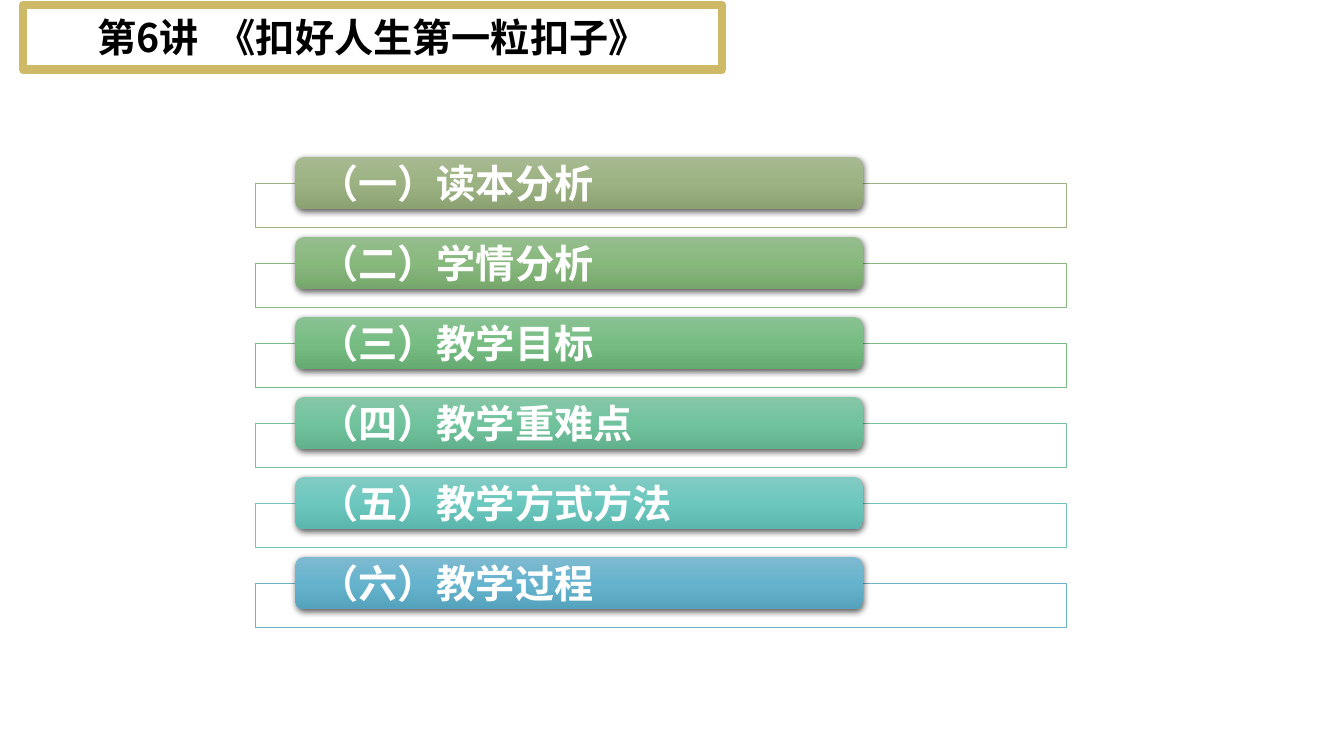
from copy import deepcopy
from dataclasses import dataclass

from lxml import etree
from pptx import Presentation
from pptx.dml.color import RGBColor
from pptx.enum import shapes, text
from pptx.oxml import ns, parse_xml
from pptx.util import Pt

FONT = "Noto Sans CJK SC"
WHITE = RGBColor(0xFF, 0xFF, 0xFF)
BLACK = RGBColor(0, 0, 0)
GOLD = RGBColor(0xCE, 0xB9, 0x66)

FIRST, PITCH = 112.2, 57.14
FRAME_DROP = 18.7


@dataclass
class Topic:
    label: str
    edge: RGBColor
    fade: tuple[RGBColor, RGBColor, RGBColor]


def make_topic(label: str, edge: str, *fade: str) -> Topic:
    top, mid, low = map(RGBColor.from_string, fade)
    return Topic(label, RGBColor.from_string(edge), (top, mid, low))


TOPICS = [
    make_topic("（一）读本分析", "9CB084", "A7B992", "9CB282", "8BA171"),
    make_topic("（二）学情分析", "89B57F", "96BD8E", "87B87C", "76A66B"),
    make_topic("（三）教学目标", "7ABA85", "8AC293", "77BD83", "66AC72"),
    make_topic("（四）教学重难点", "75BF9D", "86C6A7", "71C39D", "60B18C"),
    make_topic("（五）教学方式方法", "70C4BB", "82CBC3", "6CC8BF", "5BB7AD"),
    make_topic("（六）教学过程", "6BB1C9", "7EBAD0", "66B3CE", "55A2BC"),
]


def write(shape, words: str, *, color: RGBColor, align, inset: float,
          size: float = 28) -> None:
    frame = shape.text_frame
    frame.word_wrap = True
    frame.auto_size = text.MSO_AUTO_SIZE.NONE
    frame.vertical_anchor = text.MSO_ANCHOR.MIDDLE
    frame.margin_left = frame.margin_right = Pt(inset)
    frame.margin_top = frame.margin_bottom = 0
    para = frame.paragraphs[0]
    para.alignment = align
    run = para.add_run()
    run.text = words
    font = run.font
    font.size, font.bold, font.name = Pt(size), True, FONT
    font.color.rgb = color
    asian = etree.SubElement(run._r.get_or_add_rPr(), ns.qn("a:ea"))
    asian.set("typeface", FONT)


def set_fade(shape, colors: tuple[RGBColor, ...]) -> None:
    """Fill from top to bottom with three evenly spaced colours."""
    fill = shape.fill
    fill.gradient()
    fill.gradient_angle = 270
    stops = shape.element.spPr.find(".//" + ns.qn("a:gsLst"))
    stops.append(deepcopy(stops[0]))
    for stop, color, place in zip(fill.gradient_stops, colors, (0, 0.5, 1)):
        stop.position = place
        stop.color.rgb = color


def add_shadow(shape) -> None:
    shape.shadow.inherit = False
    effects = shape.element.spPr.find(ns.qn("a:effectLst"))
    effects.append(parse_xml(
        f'<a:outerShdw {ns.nsdecls("a")} blurRad="{Pt(4.5)}" '
        f'dist="{Pt(1.5)}" dir="5400000" algn="ctr" rotWithShape="0">'
        '<a:srgbClr val="000000"><a:alpha val="63000"/></a:srgbClr>'
        '</a:outerShdw>'))


def add_title(slide) -> None:
    title = slide.shapes.title
    title.left, title.top = Pt(16.6), Pt(3.6)
    title.width, title.height = Pt(499), Pt(46.1)
    title.element.spPr.append(parse_xml(
        f'<a:prstGeom {ns.nsdecls("a")} prst="roundRect"><a:avLst/>'
        '</a:prstGeom>'))
    title.fill.solid()
    title.fill.fore_color.rgb = WHITE
    title.line.color.rgb = GOLD
    title.line.width = Pt(6)
    write(title, "第6讲  《扣好人生第一粒扣子》", color=BLACK,
          align=text.PP_ALIGN.CENTER, inset=7.2)


def add_topic(slide, topic: Topic, top: float) -> None:
    kinds = shapes.MSO_SHAPE
    frame = slide.shapes.add_shape(
        kinds.RECTANGLE, Pt(182.2), Pt(top + FRAME_DROP), Pt(579.6), Pt(31.7))
    frame.shadow.inherit = False
    frame.fill.solid()
    frame.fill.fore_color.rgb = WHITE
    frame.line.color.rgb = topic.edge
    frame.line.width = Pt(0.5)

    bar = slide.shapes.add_shape(
        kinds.ROUNDED_RECTANGLE, Pt(211), Pt(top), Pt(405.4), Pt(37.4))
    set_fade(bar, topic.fade)
    bar.line.fill.background()
    add_shadow(bar)
    write(bar, topic.label, color=WHITE, align=text.PP_ALIGN.LEFT, inset=15.3)


def main() -> None:
    deck = Presentation()
    deck.slide_width, deck.slide_height = Pt(960), Pt(540)
    slide = deck.slides.add_slide(deck.slide_layouts[5])
    add_title(slide)
    for row, topic in enumerate(TOPICS):
        add_topic(slide, topic, FIRST + row * PITCH)
    deck.save("out.pptx")


if __name__ == "__main__":
    main()
